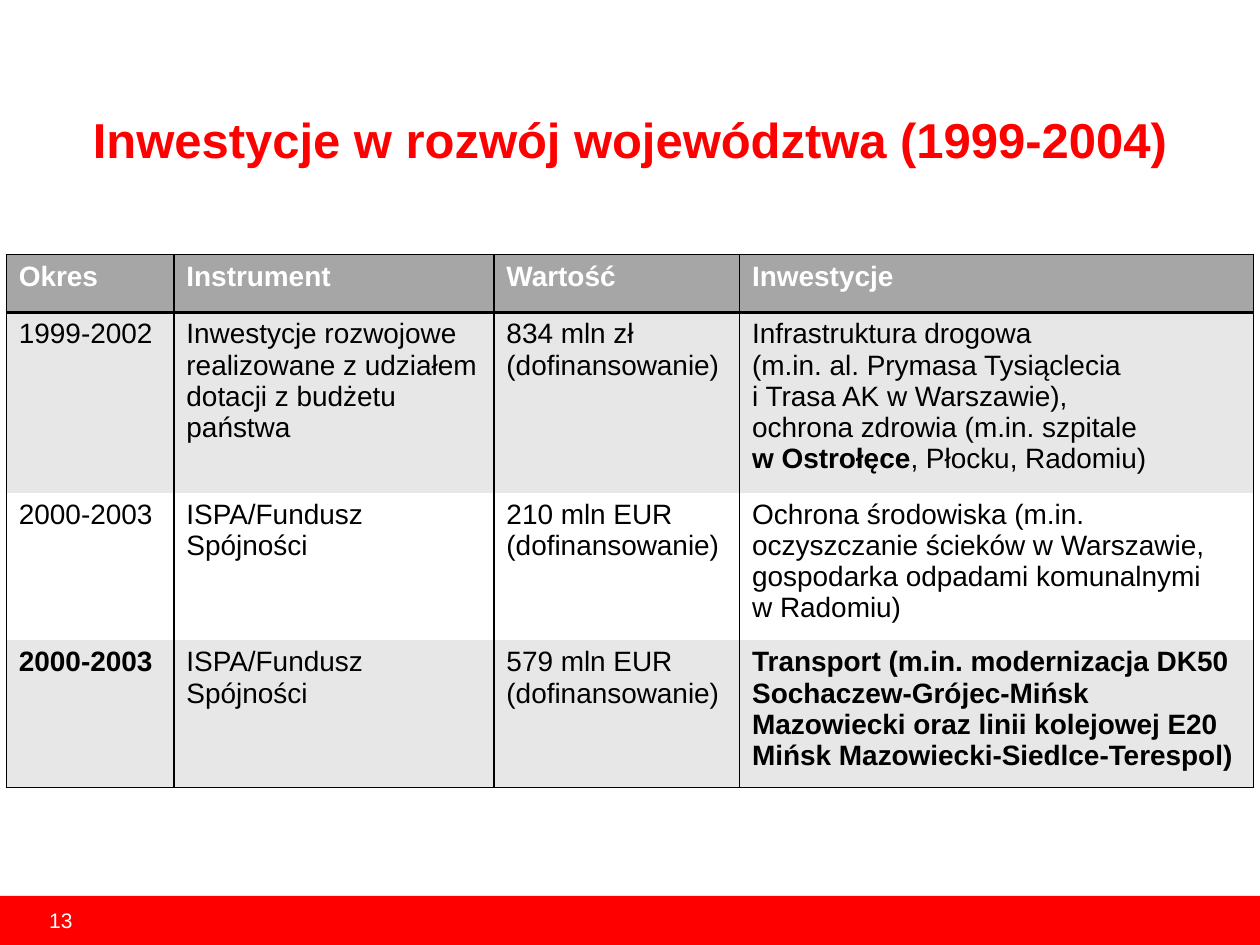
"""Build the slide on investments in the voivodeship, 1999-2004."""
from lxml.etree import SubElement
from pptx import Presentation
from pptx.dml.color import RGBColor
from pptx.enum.shapes import MSO_SHAPE
from pptx.enum.text import MSO_ANCHOR, PP_ALIGN
from pptx.oxml.ns import qn
from pptx.util import Inches, Pt


def paint(part, tint):
    part.fill.solid()
    part.fill.fore_color.rgb = RGBColor.from_string(tint)


def style(frame, size, tint, bold=False):
    for para in frame.paragraphs:
        for run in para.runs:
            run.font.name = "Arial"
            run.font.size = Pt(size)
            run.font.bold = bold
            paint(run.font, tint)
        for gap in para._p.findall(qn("a:br")):
            SubElement(gap, qn("a:rPr"), sz=str(size * 100))


deck = Presentation()
deck.slide_width, deck.slide_height = Inches(10), Inches(7.5)
wide, high = deck.slide_width, deck.slide_height
slide = deck.slides.add_slide(deck.slide_layouts[6])
shapes = slide.shapes

foot = Inches(0.39)
band = shapes.add_shape(MSO_SHAPE.RECTANGLE, 0, high - foot, wide, foot)
band.shadow.inherit = False
paint(band, "FF0000")
band.line.fill.background()

page = shapes.add_textbox(foot, high - foot, Inches(0.47), foot).text_frame
page.margin_left = page.margin_right = page.margin_top = page.margin_bottom = 0
page.vertical_anchor = MSO_ANCHOR.MIDDLE
page.word_wrap = True
page.text = "13"
style(page, 12, "FFFFFF")

side = Inches(0.12)
title = shapes.add_textbox(side, Inches(0.76), wide - 2 * side, Inches(0.68)).text_frame
title.word_wrap = True
title.vertical_anchor = MSO_ANCHOR.MIDDLE
title.text = "Inwestycje w rozwój województwa (1999-2004)"
title.paragraphs[0].alignment = PP_ALIGN.CENTER
style(title, 28, "FF0000", True)

rows = [
    ["Okres", "Instrument", "Wartość", "Inwestycje"],
    ["1999-2002",
     "Inwestycje rozwojowe realizowane z udziałem dotacji z budżetu państwa",
     "834 mln zł (dofinansowanie)",
     "Infrastruktura drogowa \v(m.in. al. Prymasa Tysiąclecia \vi Trasa AK w Warszawie),\n"
     "ochrona zdrowia (m.in. szpitale \vw Ostrołęce"],
    ["2000-2003", "ISPA/Fundusz Spójności", "210 mln EUR\n(dofinansowanie)",
     "Ochrona środowiska (m.in. oczyszczanie ścieków w Warszawie, "
     "gospodarka odpadami komunalnymi \vw Radomiu)"],
    ["2000-2003", "ISPA/Fundusz Spójności", "579 mln EUR\n(dofinansowanie)",
     "Transport (m.in. modernizacja DK50 Sochaczew-Grójec-Mińsk Mazowiecki "
     "oraz linii kolejowej E20 Mińsk Mazowiecki-Siedlce-Terespol)"],
]
cols = [1.33, 2.54, 1.95, 4.08]
tall = [0.46, 1.43, 1.17, 1.16]
fills = ["A6A6A6", "E7E7E7", "FFFFFF", "E7E7E7"]
tops = [1, 2, 0, 0]
ends = [2, 0, 0, 1]

table = shapes.add_table(len(rows), len(cols), Inches(0.05), Inches(2.02),
                         Inches(sum(cols)), Inches(sum(tall))).table
table.first_row = table.horz_banding = False
for col, size in zip(table.columns, cols):
    col.width = Inches(size)
for r, row in enumerate(rows):
    table.rows[r].height = Inches(tall[r])
    for c, words in enumerate(row):
        cell = table.cell(r, c)
        frame = cell.text_frame
        frame.text = words
        mixed = (r, c) == (1, 3)
        if mixed:
            frame.paragraphs[-1].add_run().text = ", Płocku, Radomiu)"
        bold = r == 0 or (r == 3 and c in (0, 3))
        style(frame, 16, "000000" if r else "FFFFFF", bold)
        if mixed:
            frame.paragraphs[-1].runs[-2].font.bold = True
        props = cell._tc.get_or_add_tcPr()
        for edge, size in zip("LRTB", (1, 1, tops[r], ends[r])):
            line = SubElement(props, qn(f"a:ln{edge}"), w=str(Pt(size)))
            if size:
                ink = SubElement(line, qn("a:solidFill"))
                SubElement(ink, qn("a:srgbClr"), val="000000")
            else:
                SubElement(line, qn("a:noFill"))
        paint(cell, fills[r])

deck.save("out.pptx")
